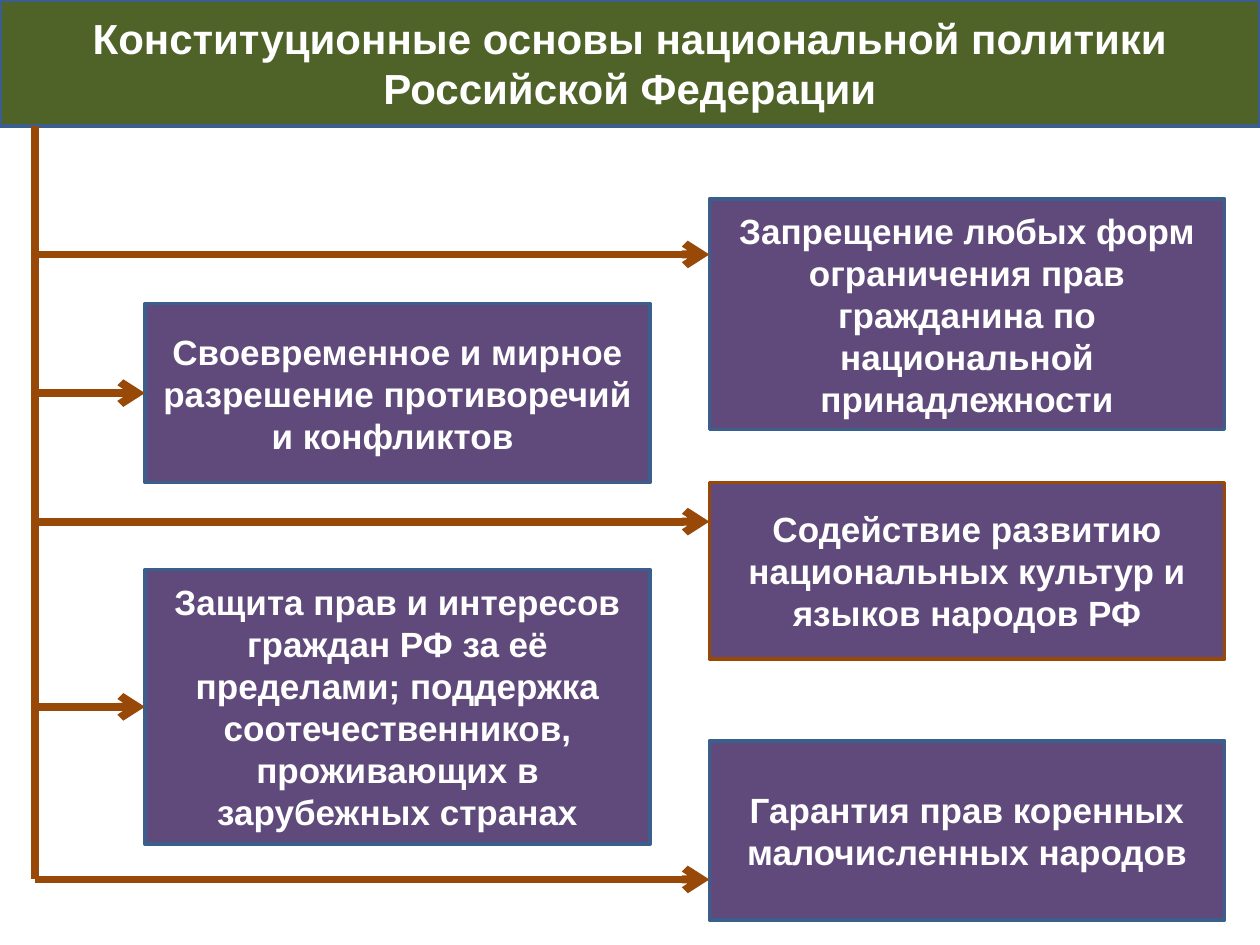
from dataclasses import dataclass

from lxml.etree import SubElement
from pptx import Presentation
from pptx.dml.color import RGBColor
from pptx.enum.shapes import MSO_CONNECTOR, MSO_SHAPE
from pptx.enum.text import MSO_ANCHOR, PP_ALIGN
from pptx.oxml.ns import qn
from pptx.util import Inches, Pt


@dataclass(frozen=True)
class Theme:
    header: str = "4F6228"
    card: str = "604A7B"
    border: str = "3A5F8C"
    accent: str = "984807"
    text: str = "FFFFFF"
    font: str = "Arial"
    title_size: float = 24
    card_size: float = 20
    border_width: float = 2
    arrow_width: float = 4.5


THEME = Theme()
COLS, ROWS = 100, 75
CELL = Inches(0.1)
LEFT, LEFT_W = 11.5, 40.1
RIGHT, RIGHT_W = 56.3, 40.9
HEADER_H = 10
TRUNK_X, TRUNK_END = 2.8, 69.8

LEFT_CARDS = [
    (24.1, 14.2, "Своевременное и мирное разрешение противоречий и конфликтов "),
    (45.2, 21.8, "Защита прав и интересов граждан РФ за её пределами; поддержка "
                 "соотечественников, проживающих в зарубежных странах"),
]
RIGHT_CARDS = [
    (15.8, 18.3, 20.2, THEME.border,
     "Запрещение любых форм ограничения прав гражданина по национальной принадлежности"),
    (38.3, 14, 41.4, THEME.accent,
     "Содействие развитию национальных культур и языков народов РФ"),
    (58.8, 14.2, TRUNK_END, THEME.border,
     "Гарантия прав коренных малочисленных народов"),
]


def grid(*cells):
    return [round(n * CELL) for n in cells]


def add_box(s, box, text, fill, size, border=THEME.border):
    sp = s.shapes.add_shape(MSO_SHAPE.RECTANGLE, *grid(*box))
    sp.shadow.inherit = False
    sp.fill.solid()
    sp.fill.fore_color.rgb = RGBColor.from_string(fill)
    sp.line.color.rgb = RGBColor.from_string(border)
    sp.line.width = Pt(THEME.border_width)
    tf = sp.text_frame
    tf.word_wrap = True
    tf.vertical_anchor = MSO_ANCHOR.MIDDLE
    p = tf.paragraphs[0]
    p.text = text
    p.alignment = PP_ALIGN.CENTER
    font = p.runs[0].font
    font.name = THEME.font
    font.size = Pt(size)
    font.bold = True
    font.color.rgb = RGBColor.from_string(THEME.text)
    return sp


def add_line(s, x1, y1, x2, y2, arrow=True):
    cxn = s.shapes.add_connector(MSO_CONNECTOR.STRAIGHT, *grid(x1, y1, x2, y2))
    cxn.line.color.rgb = RGBColor.from_string(THEME.accent)
    cxn.line.width = Pt(THEME.arrow_width)
    if arrow:
        SubElement(cxn.line._get_or_add_ln(), qn("a:tailEnd"), type="arrow")
    SubElement(cxn._element.spPr, qn("a:effectLst"))
    return cxn


def add_header(s, box):
    add_box(s, box, "Конституционные основы национальной политики Российской Федерации",
            THEME.header, THEME.title_size)


def add_left_column(s, x, w):
    for y, h, text in LEFT_CARDS:
        sp = add_box(s, (x, y, w, h), text, THEME.card, THEME.card_size)
        mid = y + h / 2
        add_line(s, TRUNK_X, mid, x, mid).end_connect(sp, 1)


def add_right_column(s, x, w):
    for y, h, arrow_y, border, text in RIGHT_CARDS:
        add_box(s, (x, y, w, h), text, THEME.card, THEME.card_size, border)
        add_line(s, TRUNK_X, arrow_y, x, arrow_y)


def main():
    prs = Presentation()
    prs.slide_width, prs.slide_height = grid(COLS, ROWS)
    s = prs.slides.add_slide(prs.slide_layouts[6])
    add_header(s, (0, 0, COLS, HEADER_H))
    add_line(s, TRUNK_X, HEADER_H, TRUNK_X, TRUNK_END, arrow=False)
    add_left_column(s, LEFT, LEFT_W)
    add_right_column(s, RIGHT, RIGHT_W)
    prs.save("out.pptx")


if __name__ == "__main__":
    main()
